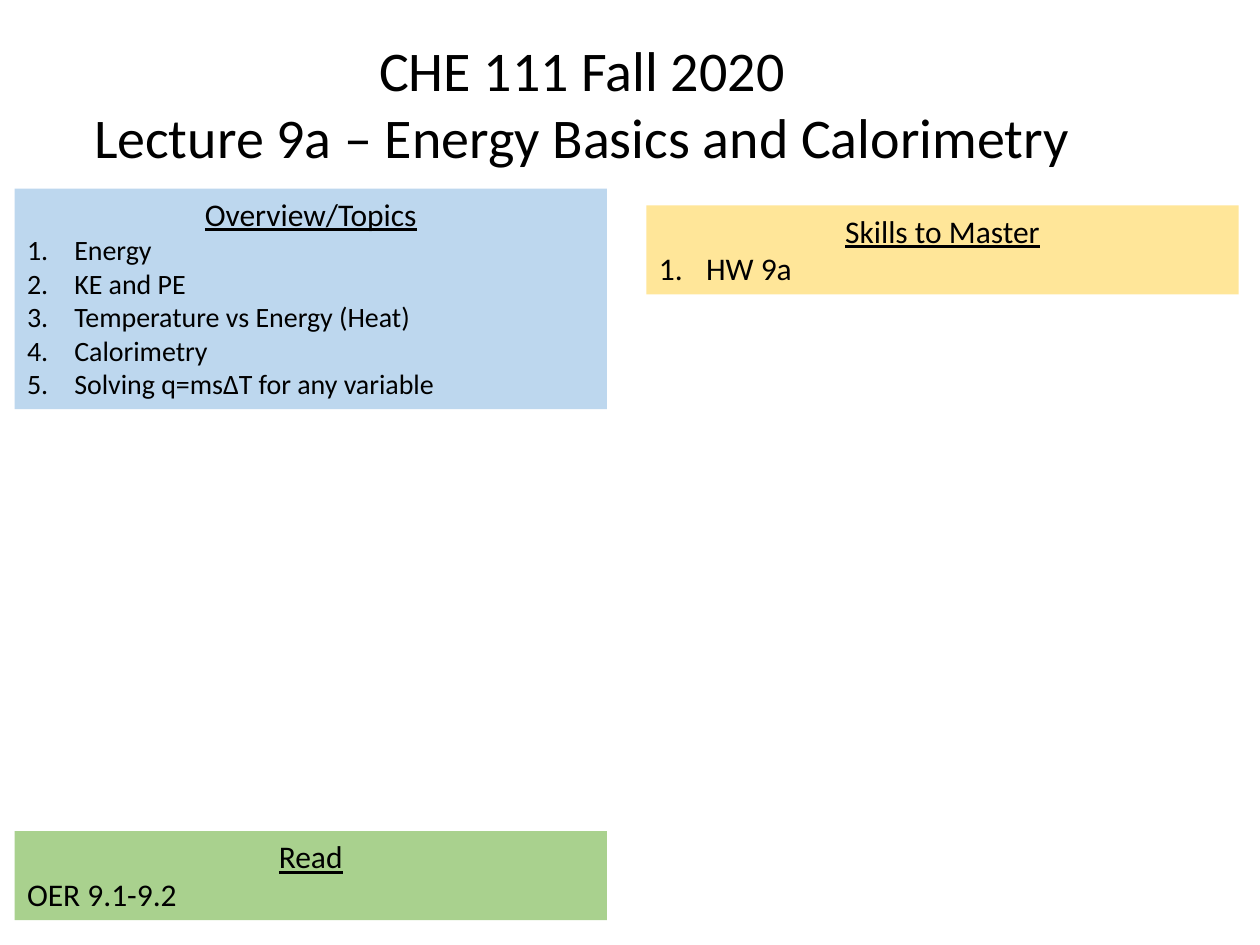
from lxml.etree import SubElement
from pptx import Presentation
from pptx.dml.color import RGBColor
from pptx.enum.shapes import MSO_SHAPE
from pptx.enum.text import MSO_ANCHOR, MSO_AUTO_SIZE, PP_ALIGN
from pptx.oxml.ns import qn
from pptx.util import Pt

BLACK = RGBColor(0x00, 0x00, 0x00)
WHITE = RGBColor(0xFF, 0xFF, 0xFF)
BLUE = RGBColor(0xBD, 0xD7, 0xEE)
YELLOW = RGBColor(0xFF, 0xE6, 0x99)
GREEN = RGBColor(0xA9, 0xD1, 0x8E)

FONT = "Calibri"
TITLE_SIZE, HEADING_SIZE = 32, 18
PANEL_WIDTH = 338.4
LEFT_COLUMN, RIGHT_COLUMN = 8.4, 369.4
NUMBER_INDENT = 27

# Content
TITLE_LINES = ["CHE 111 Fall 2020", "Lecture 9a – Energy Basics and Calorimetry"]
PANELS = [
    {"heading": "Overview/Topics", "fill": BLUE, "numbered": True, "size": 16,
     "left": LEFT_COLUMN, "top": 107.8, "height": 126,
     "items": ["Energy", "KE and PE", "Temperature vs Energy (Heat)",
               "Calorimetry", "Solving q=msΔT for any variable"]},
    {"heading": "Skills to Master", "fill": YELLOW, "numbered": True, "size": 18,
     "left": RIGHT_COLUMN, "top": 117.4, "height": 50.9, "items": ["HW 9a"]},
    {"heading": "Read", "fill": GREEN, "numbered": False, "size": 18,
     "left": LEFT_COLUMN, "top": 475, "height": 50.9, "items": ["OER 9.1-9.2"]},
]


def write_line(text_frame, index, text, size, alignment, underline=False):
    paragraph = text_frame.paragraphs[0] if index == 0 else text_frame.add_paragraph()
    paragraph.alignment = alignment
    run = paragraph.add_run()
    run.text = text
    run.font.name = FONT
    run.font.size = Pt(size)
    run.font.color.rgb = BLACK
    run.font.underline = underline
    return paragraph


def number_paragraph(paragraph):
    properties = paragraph._p.get_or_add_pPr()
    properties.set("marL", str(Pt(NUMBER_INDENT)))
    properties.set("indent", str(-Pt(NUMBER_INDENT)))
    SubElement(properties, qn("a:buFont"), typeface="+mj-lt")
    SubElement(properties, qn("a:buAutoNum"), type="arabicPeriod")


def add_panel(slide, panel):
    shape = slide.shapes.add_shape(
        MSO_SHAPE.RECTANGLE, Pt(panel["left"]), Pt(panel["top"]),
        Pt(PANEL_WIDTH), Pt(panel["height"]))
    shape.shadow.inherit = False
    shape.fill.solid()
    shape.fill.fore_color.rgb = panel["fill"]
    shape.line.fill.background()
    text_frame = shape.text_frame
    text_frame.word_wrap = True
    text_frame.auto_size = MSO_AUTO_SIZE.SHAPE_TO_FIT_TEXT
    text_frame.vertical_anchor = MSO_ANCHOR.TOP
    write_line(text_frame, 0, panel["heading"], HEADING_SIZE, PP_ALIGN.CENTER, True)
    for index, item in enumerate(panel["items"], start=1):
        paragraph = write_line(text_frame, index, item, panel["size"], PP_ALIGN.LEFT)
        if panel["numbered"]:
            number_paragraph(paragraph)


def main():
    presentation = Presentation()
    presentation.slide_width, presentation.slide_height = Pt(720), Pt(540)
    slide = presentation.slides.add_slide(presentation.slide_layouts[6])
    slide.background.fill.solid()
    slide.background.fill.fore_color.rgb = WHITE

    # Topic, skill and reading panels
    for panel in PANELS:
        add_panel(slide, panel)

    # Lecture title
    title = slide.shapes.add_textbox(Pt(36), Pt(16.6), Pt(593.3), Pt(85))
    title.text_frame.word_wrap = False
    title.text_frame.auto_size = MSO_AUTO_SIZE.SHAPE_TO_FIT_TEXT
    for index, line in enumerate(TITLE_LINES):
        write_line(title.text_frame, index, line, TITLE_SIZE, PP_ALIGN.CENTER)

    presentation.save("out.pptx")


if __name__ == "__main__":
    main()
